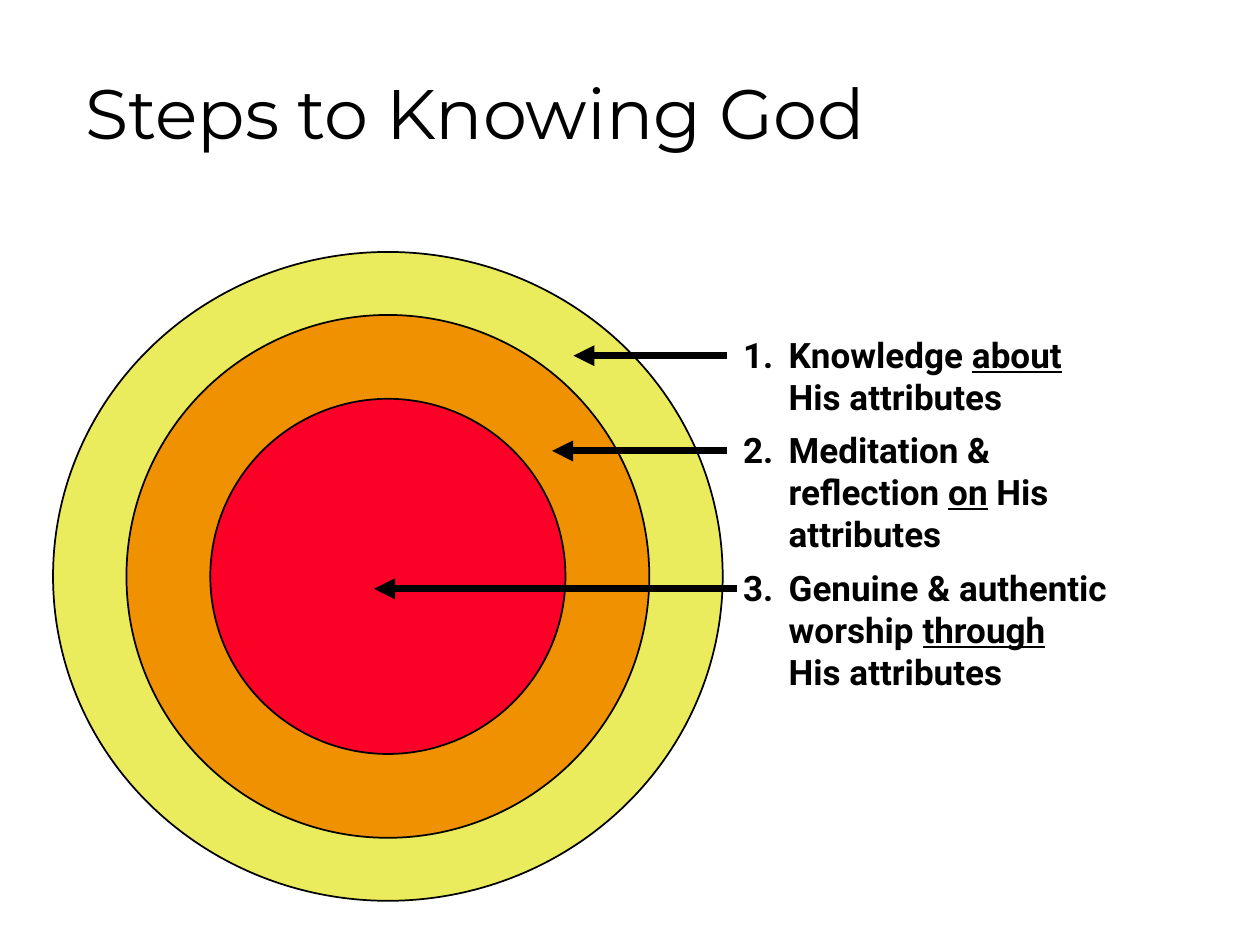
import pptx
import pptx.util
import pptx.dml.color
import pptx.enum.shapes
import pptx.enum.text
import pptx.oxml.ns
from dataclasses import dataclass
from lxml import etree

Cm = pptx.util.Cm
Pt = pptx.util.Pt
qn = pptx.oxml.ns.qn


@dataclass(frozen=True)
class Theme:
    ink: str = "000000"
    rings: tuple = ("EAEC5E", "EF9100", "FC0128")
    head: str = "Montserrat"
    body: str = "Roboto"
    big: int = 40
    text: int = 20
    edge: int = 1
    shaft: int = 4


LOOK = Theme()
RINGS = [(13.5, 13.08), (10.54, 10.54), (7.16, 7.16)]
STEPS = [
    (["Knowledge _about_", "His attributes"], 14.66, 11.56),
    (["Meditation &", "reflection _on_ His", "attributes"], 14.66, 11.13),
    (["Genuine & authentic", "worship _through_", "His attributes"], 14.86, 7.54),
]


def rgb(code):
    return pptx.dml.color.RGBColor.from_string(code)


def format_all(item, values):
    for name, value in values.items():
        setattr(item, name, value)


def style(run, name, size, **more):
    format_all(run.font, {"name": name, "size": Pt(size), **more})
    run.font.color.rgb = rgb(LOOK.ink)


def outline(shape, width):
    shape.line.color.rgb = rgb(LOOK.ink)
    shape.line.width = Pt(width)


def add_title(slide, left, top, width, height):
    title = slide.shapes.title
    format_all(title, {"left": Cm(left), "top": Cm(top),
                       "width": Cm(width), "height": Cm(height)})
    frame = title.text_frame
    format_all(frame, {"word_wrap": True,
                       "auto_size": pptx.enum.text.MSO_AUTO_SIZE.NONE,
                       "vertical_anchor": pptx.enum.text.MSO_ANCHOR.TOP})
    para = frame.paragraphs[0]
    para.alignment = pptx.enum.text.PP_ALIGN.LEFT
    run = para.add_run()
    run.text = "Steps to Knowing God"
    style(run, LOOK.head, LOOK.big, bold=False)


def add_rings(slide, left, top, width, height):
    for (wide, high), fill in zip(RINGS, LOOK.rings):
        ring = slide.shapes.add_shape(
            pptx.enum.shapes.MSO_SHAPE.OVAL,
            Cm(left + (width - wide) / 2), Cm(top + (height - high) / 2),
            Cm(wide), Cm(high))
        ring.shadow.inherit = False
        ring.fill.solid()
        ring.fill.fore_color.rgb = rgb(fill)
        outline(ring, LOOK.edge)


def add_arrow(slide, start, end, y):
    arrow = slide.shapes.add_connector(
        pptx.enum.shapes.MSO_CONNECTOR.STRAIGHT,
        Cm(start), Cm(y), Cm(end), Cm(y))
    outline(arrow, LOOK.shaft)
    props = arrow.element.spPr
    etree.SubElement(props.find(qn("a:ln")), qn("a:tailEnd"), type="triangle")
    etree.SubElement(props, qn("a:effectLst"))


def add_step(slide, count, lines, left, top, width, height):
    box = slide.shapes.add_textbox(Cm(left), Cm(top), Cm(width), Cm(height))
    box.text_frame.word_wrap = False
    para = box.text_frame.paragraphs[0]
    props = para._p.get_or_add_pPr()
    indent = Cm(0.92)
    props.set("marL", str(indent))
    props.set("indent", str(-indent))
    etree.SubElement(props, qn("a:buFont"), typeface=LOOK.body)
    etree.SubElement(props, qn("a:buAutoNum"), type="arabicPeriod",
                     startAt=str(count))
    for row, line in enumerate(lines):
        if row:
            para.add_line_break()
        for part, text in enumerate(line.split("_")):
            if text:
                run = para.add_run()
                run.text = text
                style(run, LOOK.body, LOOK.text, bold=True,
                      underline=part % 2 == 1)


def add_steps(slide, left, top, width):
    for count, (lines, start, end) in enumerate(STEPS, 1):
        height = 0.86 * len(lines) + 0.2
        add_arrow(slide, start, end, top + 0.57)
        add_step(slide, count, lines, left, top, width, height)
        top += height


def main():
    deck = pptx.Presentation()
    format_all(deck, {"slide_width": Cm(25.4), "slide_height": Cm(19.05)})
    slide = deck.slides.add_slide(deck.slide_layouts[5])
    add_title(slide, 1.47, 1.27, 18.52, 1.93)
    add_rings(slide, 1.07, 5.08, 13.5, 13.08)
    add_steps(slide, 14.73, 6.6, 8.84)
    deck.save("out.pptx")


if __name__ == "__main__":
    main()
